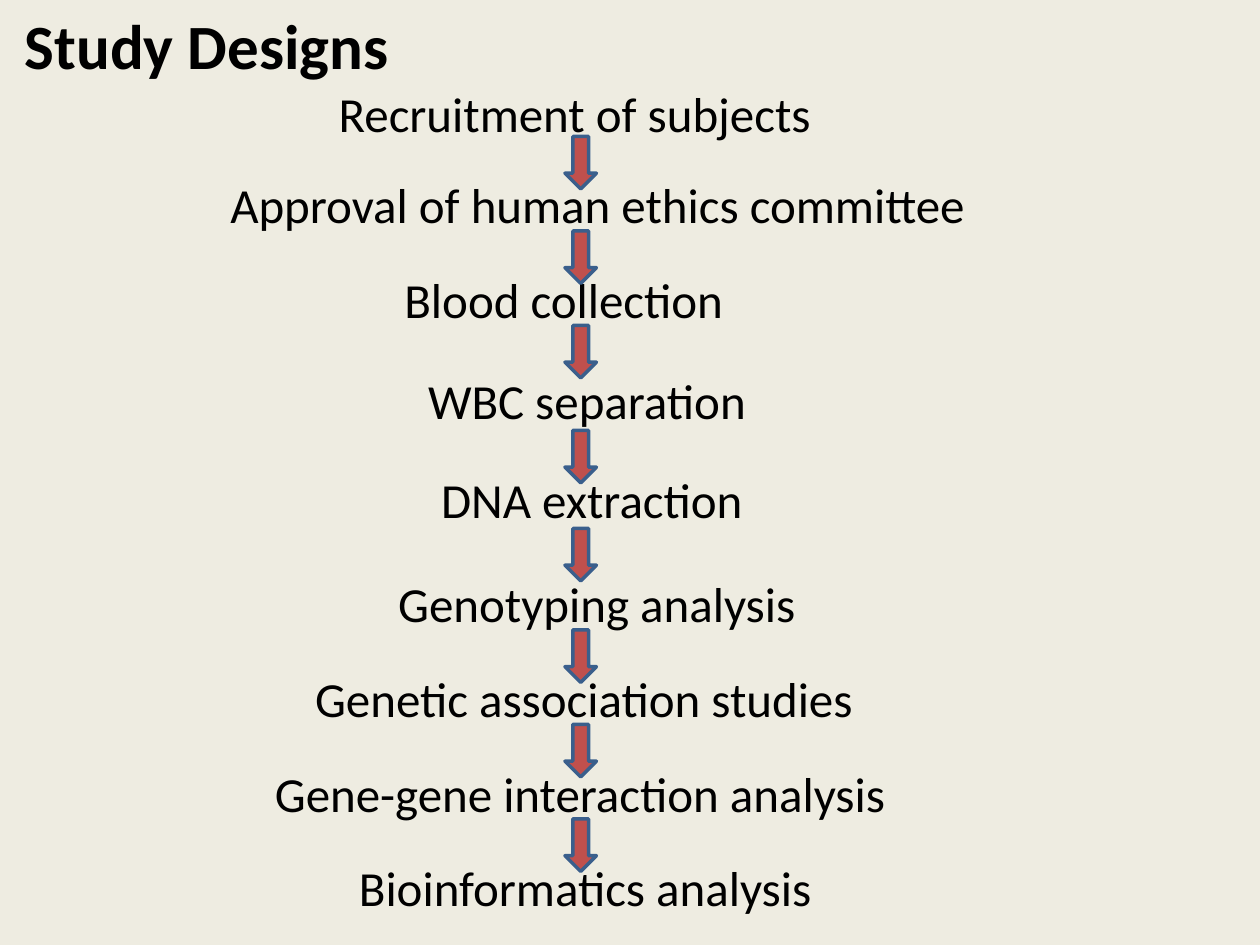
"""Build the study design slide: a title and a chain of steps joined by block arrows."""
from dataclasses import dataclass

from pptx import Presentation
from pptx import util as u
from pptx.dml.color import RGBColor
from pptx.enum import shapes, text


@dataclass(frozen=True)
class Theme:
    back: str = "EEECE1"
    ink: str = "000000"
    fill: str = "C0504D"
    edge: str = "3A5F8C"
    font: str = "Calibri"
    head: int = 36
    body: int = 28


THEME = Theme()
STEPS = [
    ("Recruitment of subjects", 186.5, 44, 310),
    ("Approval of human ethics committee", 124.5, 96, 439),
    ("Blood collection", 224, 150.5, 213),
    ("WBC separation", 237.5, 208, 198),
    ("DNA extraction", 245, 265, 203),
    ("Genotyping analysis", 220.5, 324, 244),
    ("Genetic association studies", 173, 378.5, 330),
    ("Gene-gene interaction analysis", 150, 432.5, 367),
    ("Bioinformatics analysis", 198, 486.5, 284),
]
ARROW_TOPS = [84, 138, 192, 252, 308, 366, 420, 474]


def color(code):
    return RGBColor.from_string(code)


def place(shape, left, top, width, height):
    shape.left, shape.top = u.Pt(left), u.Pt(top)
    shape.width, shape.height = u.Pt(width), u.Pt(height)


def write(shape, words, size=THEME.body, bold=False, align=text.PP_ALIGN.LEFT, wrap=True):
    frame = shape.text_frame
    frame.word_wrap = wrap
    frame.auto_size = text.MSO_AUTO_SIZE.SHAPE_TO_FIT_TEXT
    frame.vertical_anchor = text.MSO_ANCHOR.TOP
    para = frame.paragraphs[0]
    para.alignment = align
    run = para.add_run()
    run.text = words
    run.font.name, run.font.size, run.font.bold = THEME.font, u.Pt(size), bold
    run.font.color.rgb = color(THEME.ink)


def add_title(slide, words):
    title = slide.shapes.title
    place(title, 6, 0, 224.5, 51)
    write(title, words, size=THEME.head, bold=True, align=text.PP_ALIGN.CENTER, wrap=False)


def add_step(slide, words, left, top, width):
    box = slide.shapes.add_textbox(u.Pt(left), u.Pt(top), u.Pt(width), u.Pt(41))
    write(box, words)


def add_arrow(slide, top):
    arrow = slide.shapes.add_shape(
        shapes.MSO_SHAPE.RIGHT_ARROW, u.Pt(316.8), u.Pt(top), u.Pt(30), u.Pt(18))
    arrow.rotation = 90
    arrow.shadow.inherit = False
    arrow.fill.solid()
    arrow.fill.fore_color.rgb = color(THEME.fill)
    arrow.line.color.rgb = color(THEME.edge)
    arrow.line.width = u.Pt(2)


def main():
    deck = Presentation()
    deck.slide_width, deck.slide_height = u.Pt(720), u.Pt(540)
    slide = deck.slides.add_slide(deck.slide_layouts.get_by_name("Title Only"))
    slide.background.fill.solid()
    slide.background.fill.fore_color.rgb = color(THEME.back)
    add_title(slide, "Study Designs")
    for step in STEPS:
        add_step(slide, *step)
    for top in ARROW_TOPS:
        add_arrow(slide, top)
    deck.save("out.pptx")


if __name__ == "__main__":
    main()
